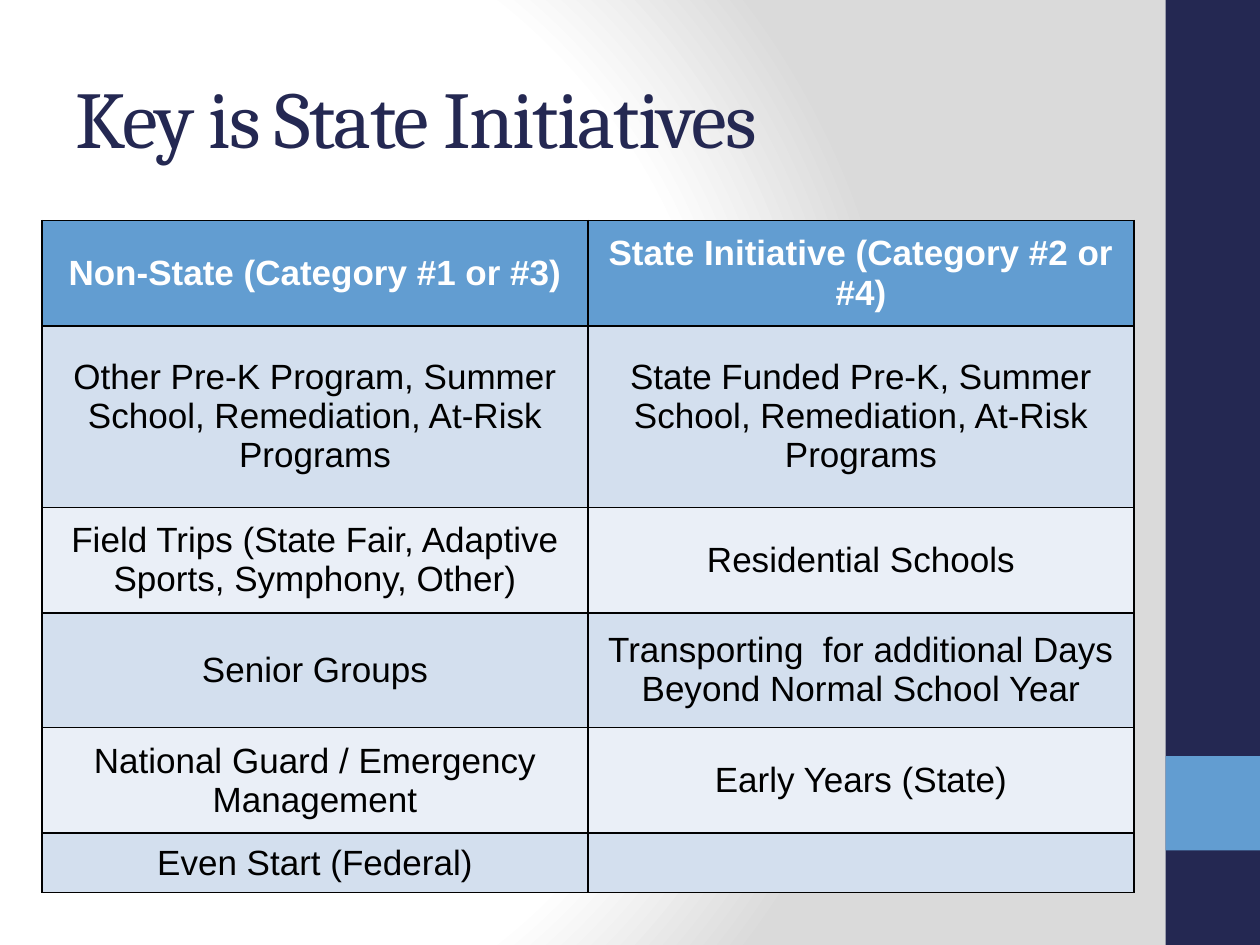
from dataclasses import dataclass

import lxml.etree
import pptx
import pptx.dml.color
import pptx.enum.shapes
import pptx.enum.text
import pptx.oxml
import pptx.oxml.ns
import pptx.util

Pt = pptx.util.Pt
ALIGN = pptx.enum.text.PP_ALIGN
MIDDLE = pptx.enum.text.MSO_ANCHOR.MIDDLE


@dataclass(frozen=True)
class Theme:
    navy: str = "242852"
    blue: str = "629DD1"
    white: str = "FFFFFF"
    black: str = "000000"
    gray: str = "DADADA"
    bands: tuple = ("D3DFEE", "EAEFF7")
    title_font: str = "Cambria"
    body_font: str = "Arial"
    title_size: int = 46
    body_size: int = 20


THEME = Theme()

ROWS = [
    ("Non-State (Category #1 or #3)", "State Initiative (Category #2 or #4)"),
    ("Other Pre-K Program, Summer School, Remediation, At-Risk Programs",
     "State Funded Pre-K, Summer School, Remediation, At-Risk Programs"),
    ("Field Trips (State Fair, Adaptive Sports, Symphony, Other)",
     "Residential Schools"),
    ("Senior Groups",
     "Transporting  for additional Days Beyond Normal School Year"),
    ("National Guard / Emergency Management", "Early Years (State)"),
    ("Even Start (Federal)", ""),
]
ROW_HEIGHTS = [60.4, 103.5, 60.4, 65.5, 60.4, 34]
COLUMN_WIDTH = 312


def rgb(color):
    return pptx.dml.color.RGBColor.from_string(color)


def write_text(tf, text, *, font, size, color, bold=False,
               align=ALIGN.LEFT, spacing=None):
    p = tf.paragraphs[0]
    p.alignment = align
    if not text:
        p.font.size = Pt(size)
        return
    r = p.add_run()
    r.text = text
    r.font.name = font
    r.font.size = Pt(size)
    r.font.bold = bold
    r.font.color.rgb = rgb(color)
    if spacing is not None:
        r.font._element.set("spc", str(int(spacing * 100)))


def set_background(s):
    fill = s.background.fill
    fill.gradient()
    grad = s.background._cSld.bg.bgPr.find(pptx.oxml.ns.qn("a:gradFill"))
    for child in list(grad):
        grad.remove(child)
    stops = "".join(
        f'<a:gs pos="{pos * 1000}"><a:srgbClr val="{color}"/></a:gs>'
        for pos, color in ((0, THEME.white), (75, THEME.white), (100, THEME.gray))
    )
    source = pptx.oxml.parse_xml(
        f'<a:gradFill {pptx.oxml.ns.nsdecls("a")}><a:gsLst>{stops}</a:gsLst>'
        '<a:path path="circle">'
        '<a:fillToRect l="20000" t="50000" r="100000" b="50000"/>'
        '</a:path></a:gradFill>'
    )
    grad.extend(list(source))


def add_block(s, left, top, width, height, color):
    sp = s.shapes.add_shape(pptx.enum.shapes.MSO_SHAPE.RECTANGLE,
                            Pt(left), Pt(top), Pt(width), Pt(height))
    sp.shadow.inherit = False
    sp.fill.solid()
    sp.fill.fore_color.rgb = rgb(color)
    sp.line.fill.background()


def set_title(s, text):
    sp = s.shapes.title
    sp.left, sp.top, sp.width, sp.height = Pt(36), Pt(21.6), Pt(600), Pt(90)
    sp.text_frame.vertical_anchor = MIDDLE
    write_text(sp.text_frame, text, font=THEME.title_font,
               size=THEME.title_size, color=THEME.navy, spacing=-1)


def set_borders(cell, color, width):
    tc_pr = cell._tc.get_or_add_tcPr()
    for side in ("lnL", "lnR", "lnT", "lnB"):
        ln = lxml.etree.SubElement(tc_pr, pptx.oxml.ns.qn(f"a:{side}"),
                                   w=str(Pt(width)))
        fill = lxml.etree.SubElement(ln, pptx.oxml.ns.qn("a:solidFill"))
        lxml.etree.SubElement(fill, pptx.oxml.ns.qn("a:srgbClr"), val=color)


def format_cell(cell, text, *, fill, color, bold):
    cell.vertical_anchor = MIDDLE
    set_borders(cell, THEME.black, 1)
    cell.fill.solid()
    cell.fill.fore_color.rgb = rgb(fill)
    write_text(cell.text_frame, text, font=THEME.body_font,
               size=THEME.body_size, color=color, bold=bold,
               align=ALIGN.CENTER)


def add_initiative_table(s, left, top):
    columns = len(ROWS[0])
    table = s.shapes.add_table(len(ROWS), columns, Pt(left), Pt(top),
                               Pt(COLUMN_WIDTH * columns),
                               Pt(sum(ROW_HEIGHTS))).table
    for column in table.columns:
        column.width = Pt(COLUMN_WIDTH)
    for i, (texts, height) in enumerate(zip(ROWS, ROW_HEIGHTS)):
        table.rows[i].height = Pt(height)
        header = i == 0
        for j, text in enumerate(texts):
            format_cell(table.cell(i, j), text,
                        fill=THEME.blue if header else THEME.bands[(i - 1) % 2],
                        color=THEME.white if header else THEME.black,
                        bold=header)


def main():
    prs = pptx.Presentation()
    prs.slide_width, prs.slide_height = Pt(720), Pt(540)
    s = prs.slides.add_slide(prs.slide_layouts.get_by_name("Title Only"))
    set_background(s)
    add_block(s, 666, 0, 54, 540, THEME.navy)
    add_block(s, 666, 432, 54, 54, THEME.blue)
    set_title(s, "Key is State Initiatives")
    add_initiative_table(s, 24, 126)
    prs.save("out.pptx")


if __name__ == "__main__":
    main()
